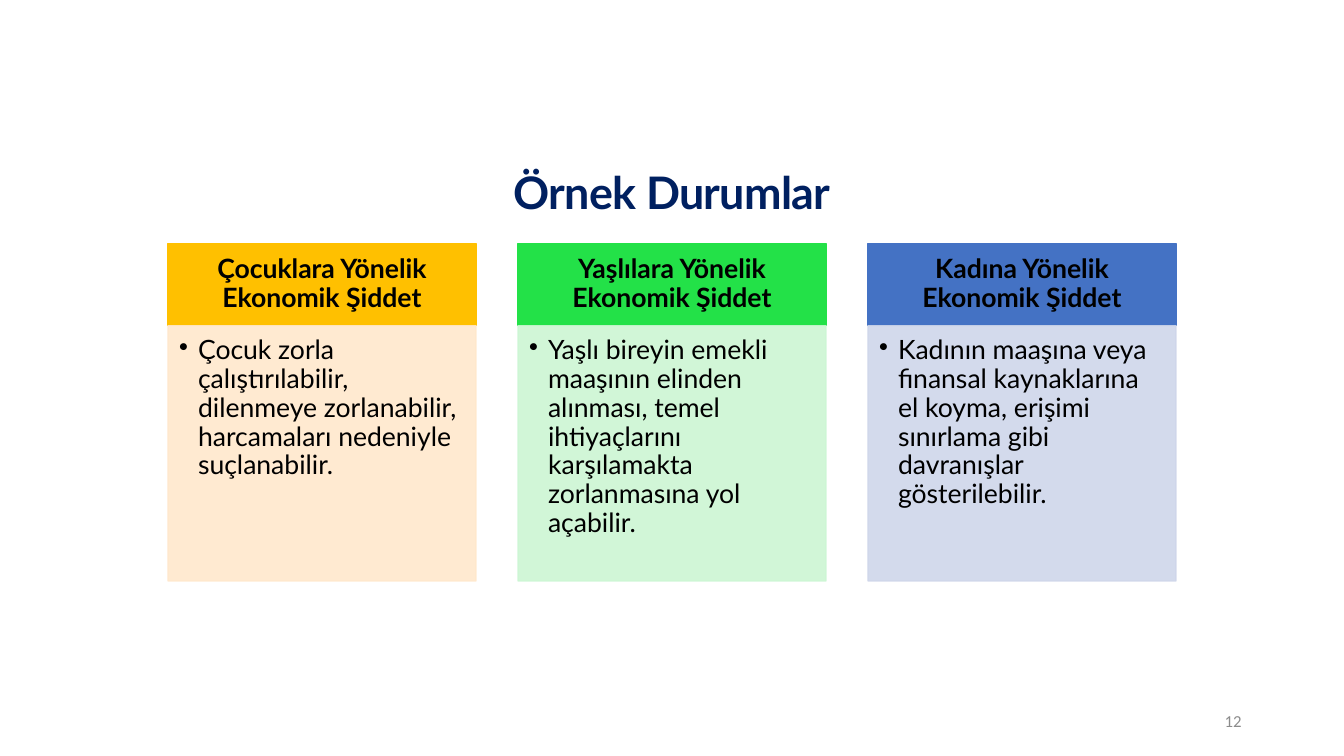
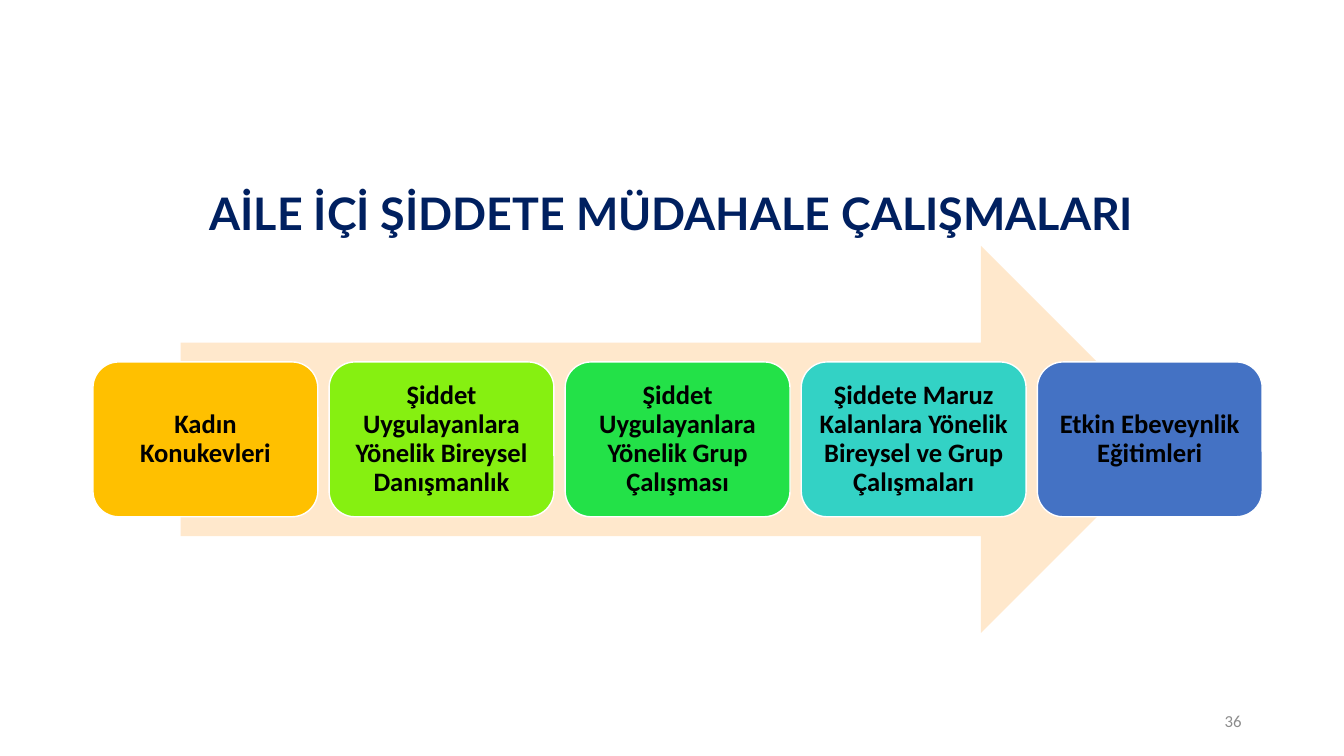
from pptx import Presentation
from pptx.dml.color import RGBColor
from pptx.enum.shapes import MSO_SHAPE
from pptx.enum.text import MSO_ANCHOR, MSO_AUTO_SIZE, PP_ALIGN
from pptx.oxml.ns import qn
from pptx.util import Pt
from lxml import etree

RECTANGLE, ROUNDED = MSO_SHAPE.RECTANGLE, MSO_SHAPE.ROUNDED_RECTANGLE
RIGHT_ARROW = MSO_SHAPE.RIGHT_ARROW
TOP, MIDDLE, BOTTOM = MSO_ANCHOR.TOP, MSO_ANCHOR.MIDDLE, MSO_ANCHOR.BOTTOM
LEFT, CENTER, RIGHT = PP_ALIGN.LEFT, PP_ALIGN.CENTER, PP_ALIGN.RIGHT

# Shared colours
NAVY = RGBColor(0x00, 0x20, 0x60)
BLACK = RGBColor(0x00, 0x00, 0x00)
WHITE = RGBColor(0xFF, 0xFF, 0xFF)
GRAY = RGBColor(0x8C, 0x8C, 0x8C)
AMBER = RGBColor(0xFF, 0xC0, 0x00)
LIME = RGBColor(0x86, 0xF0, 0x11)
GREEN = RGBColor(0x23, 0xE1, 0x48)
TURQUOISE = RGBColor(0x33, 0xD2, 0xC5)
BLUE = RGBColor(0x44, 0x72, 0xC4)
PALE_AMBER = RGBColor(0xFF, 0xE8, 0xCC)
PALE_GREEN = RGBColor(0xCC, 0xF6, 0xD3)
PALE_BLUE = RGBColor(0xCF, 0xD6, 0xEA)

# Shared text formats
TITLE_FONT = {"name": "Lato", "size": Pt(32), "bold": True}
HEADER_FONT = {"name": "Lato", "size": Pt(19), "bold": True}
BODY_FONT = {"name": "Lato", "size": Pt(19), "bold": False}
CARD_FONT = {"name": "Calibri", "size": Pt(19), "bold": True}
NUMBER_FONT = {"name": "Calibri", "size": Pt(12), "bold": False}

SLIDE_SIZE = (960, 540)
NUMBER_BOX = (678, 500.5, 216, 28.75)
TITLE_ONLY_LAYOUT = 5
LINE_SPACING = 0.9
BULLET_INDENT = 13.5
BODY_OPACITY = 90

# Slide content
EXAMPLES = [
    ("Çocuklara Yönelik Ekonomik Şiddet",
     "Çocuk zorla çalıştırılabilir, dilenmeye zorlanabilir, harcamaları "
     "nedeniyle suçlanabilir.", AMBER, PALE_AMBER),
    ("Yaşlılara Yönelik Ekonomik Şiddet",
     "Yaşlı bireyin emekli maaşının elinden alınması, temel ihtiyaçlarını "
     "karşılamakta zorlanmasına yol açabilir.", GREEN, PALE_GREEN),
    ("Kadına Yönelik Ekonomik Şiddet",
     "Kadının maaşına veya finansal kaynaklarına el koyma, erişimi sınırlama "
     "gibi davranışlar gösterilebilir.", BLUE, PALE_BLUE),
]
INTERVENTIONS = [
    ("Kadın Konukevleri", AMBER),
    ("Şiddet Uygulayanlara Yönelik Bireysel Danışmanlık", LIME),
    ("Şiddet Uygulayanlara Yönelik Grup Çalışması", GREEN),
    ("Şiddete Maruz Kalanlara Yönelik Bireysel ve Grup Çalışmaları", TURQUOISE),
    ("Etkin Ebeveynlik Eğitimleri", BLUE),
]


def to_points(box):
    return [Pt(length) for length in box]


def set_attributes(target, values):
    for name, value in values.items():
        setattr(target, name, value)


def write_text(shape, text, font, color=BLACK, align=CENTER, anchor=MIDDLE,
               margins=(7.2, 3.6, 7.2, 3.6), spacing=LINE_SPACING, bullet=False):
    """Fill a shape with one formatted paragraph; margins run left, top, right, bottom."""
    left, top, right, bottom = to_points(margins)
    frame = shape.text_frame
    set_attributes(frame, {
        "word_wrap": True, "auto_size": MSO_AUTO_SIZE.NONE, "vertical_anchor": anchor,
        "margin_left": left, "margin_top": top,
        "margin_right": right, "margin_bottom": bottom})
    paragraph = frame.paragraphs[0]
    set_attributes(paragraph, {
        "alignment": align, "line_spacing": spacing, "space_before": Pt(0)})
    if bullet:
        properties = paragraph._p.get_or_add_pPr()
        properties.set("marL", str(Pt(BULLET_INDENT)))
        properties.set("indent", str(-Pt(BULLET_INDENT)))
        etree.SubElement(properties, qn("a:buChar"), char="•")
    run = paragraph.add_run()
    run.text = text
    set_attributes(run.font, font)
    run.font.color.rgb = color
    return run


def add_block(slide, kind, box, fill, line=None, opacity=100):
    """Add a flat filled shape, with an optional one-point outline."""
    shape = slide.shapes.add_shape(kind, *to_points(box))
    shape.shadow.inherit = False
    shape.fill.solid()
    shape.fill.fore_color.rgb = fill
    if line is None:
        shape.line.fill.background()
    else:
        shape.line.color.rgb = line
        shape.line.width = Pt(1)
    if opacity < 100:
        for color in shape._element.spPr.iter(qn("a:srgbClr")):
            etree.SubElement(color, qn("a:alpha"), val=str(opacity * 1000))
    return shape


def add_base_slide(presentation, title, title_box, number, anchor=MIDDLE, tracking=0):
    """Add a slide with the shared title style and page number."""
    slide = presentation.slides.add_slide(presentation.slide_layouts[TITLE_ONLY_LAYOUT])
    heading = slide.shapes.title
    heading.left, heading.top, heading.width, heading.height = to_points(title_box)
    run = write_text(heading, title, TITLE_FONT, NAVY, anchor=anchor)
    if tracking:
        run._r.get_or_add_rPr().set("spc", str(int(tracking * 100)))
    number_box = slide.shapes.add_textbox(*to_points(NUMBER_BOX))
    write_text(number_box, number, NUMBER_FONT, GRAY, align=RIGHT, spacing=1.0)
    return slide


def add_example_columns(slide, box, gap=30, header_height=58.7):
    """Equal columns, each with a coloured header above a pale body."""
    left, top, width, height = box
    column_width = (width - gap * (len(EXAMPLES) - 1)) / len(EXAMPLES)
    for index, (heading, example, color, pale) in enumerate(EXAMPLES):
        x = left + index * (column_width + gap)
        header = add_block(slide, RECTANGLE, (x, top, column_width, header_height),
                           color, color)
        write_text(header, heading, HEADER_FONT, margins=(10.8, 6, 10.8, 6))
        body = add_block(
            slide, RECTANGLE,
            (x, top + header_height, column_width, height - header_height),
            pale, pale, BODY_OPACITY)
        write_text(body, example, BODY_FONT, align=LEFT, anchor=TOP,
                   margins=(8, 8, 10.8, 12), bullet=True)


def add_intervention_process(slide, box, gap=8):
    """A row of rounded cards over a wide arrow, both centred in the box."""
    left, top, width, height = box
    arrow_width = width * 0.85
    add_block(slide, RIGHT_ARROW,
              (left + (width - arrow_width) / 2, top, arrow_width, height), PALE_AMBER)
    card_width = (width - gap * (len(INTERVENTIONS) - 1)) / len(INTERVENTIONS)
    card_height = height * 0.4
    card_top = top + (height - card_height) / 2
    for index, (text, color) in enumerate(INTERVENTIONS):
        x = left + index * (card_width + gap)
        card = add_block(slide, ROUNDED, (x, card_top, card_width, card_height),
                         color, WHITE)
        # The rounded corners already inset the text by about 5 points
        write_text(card, text, CARD_FONT, margins=(6, 6, 6, 6))


def main():
    presentation = Presentation()
    presentation.slide_width, presentation.slide_height = to_points(SLIDE_SIZE)

    examples = add_base_slide(presentation, "Örnek Durumlar", (120, 93.5, 720, 91),
                              "12", tracking=-0.5)
    add_example_columns(examples, (120, 174, 720, 241))

    process = add_base_slide(presentation, "AİLE İÇİ ŞİDDETE MÜDAHALE ÇALIŞMALARI",
                             (120, 100, 720, 75.5), "36", anchor=BOTTOM)
    add_intervention_process(process, (66.4, 175.6, 835.2, 276.5))

    presentation.save("out.pptx")


if __name__ == "__main__":
    main()
